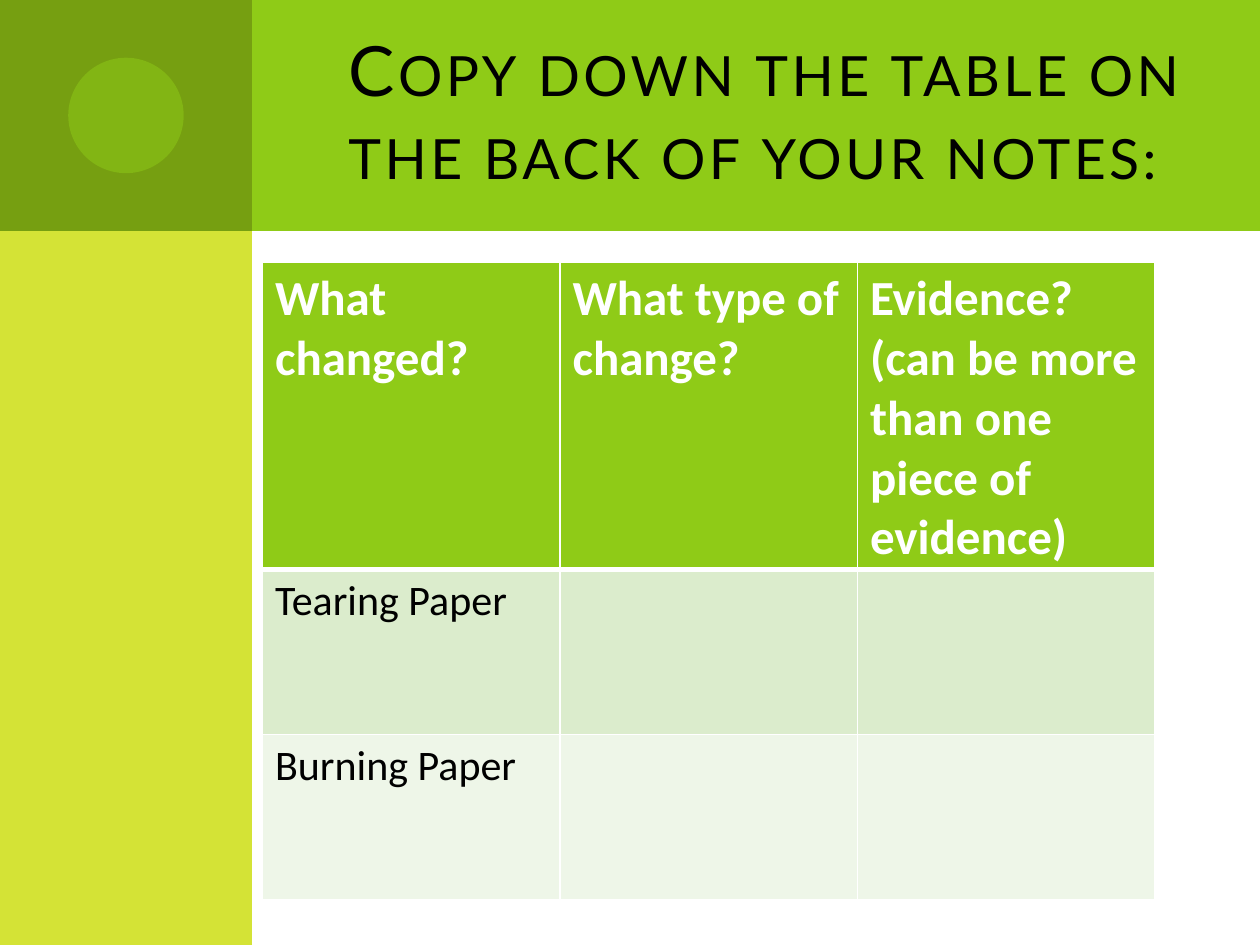
from lxml import etree
from pptx import Presentation
from pptx import util as u
from pptx.dml.color import RGBColor
from pptx.enum import shapes, text
from pptx.oxml import ns

GREEN = RGBColor(0x8F, 0xCB, 0x17)
LIME = RGBColor(0xD4, 0xE3, 0x36)
DARK_GREEN = RGBColor(0x76, 0x9F, 0x11)
PALE_GREEN = RGBColor(0xDB, 0xEC, 0xCC)
PALEST_GREEN = RGBColor(0xEE, 0xF6, 0xE8)
WHITE = RGBColor(0xFF, 0xFF, 0xFF)
BLACK = RGBColor(0, 0, 0)


def add_panel(page, kind, left, top, width, height, color):
    panel = page.shapes.add_shape(kind, u.Pt(left), u.Pt(top), u.Pt(width), u.Pt(height))
    panel.shadow.inherit = False
    panel.fill.solid()
    panel.fill.fore_color.rgb = color
    panel.line.fill.background()
    return panel


def add_border(cell, side, width):
    line = etree.SubElement(cell._tc.get_or_add_tcPr(), ns.qn(f"a:{side}"), w=str(u.Pt(width)))
    fill = etree.SubElement(line, ns.qn("a:solidFill"))
    etree.SubElement(fill, ns.qn("a:srgbClr"), val=str(WHITE))


deck = Presentation()
deck.slide_width, deck.slide_height = u.Pt(720), u.Pt(540)
page = deck.slides.add_slide(deck.slide_layouts[6])

RECTANGLE = shapes.MSO_SHAPE.RECTANGLE
add_panel(page, RECTANGLE, 36, 0, 684, 132, GREEN)
add_panel(page, RECTANGLE, 0, 0, 144, 540, LIME)
add_panel(page, RECTANGLE, 0, 0, 144, 132, DARK_GREEN)
circle = add_panel(page, shapes.MSO_SHAPE.OVAL, 39, 33, 66, 66, GREEN)
circle_color = circle.fill._xPr.find(".//" + ns.qn("a:srgbClr"))
etree.SubElement(circle_color, ns.qn("a:alpha"), val="50000")

title = page.shapes.add_textbox(u.Pt(192), u.Pt(18), u.Pt(492), u.Pt(90))
frame = title.text_frame
frame.word_wrap = True
frame.vertical_anchor = text.MSO_ANCHOR.MIDDLE
frame.text = "Copy down the table on the back of your notes:"
para = frame.paragraphs[0]
para.alignment = text.PP_ALIGN.LEFT
span = para.runs[0]
span.font.name = "Lato"
span.font.size = u.Pt(39.6)
span.font.color.rgb = BLACK
properties = span.font._element
properties.set("cap", "small")
properties.set("spc", "200")

rows = [
    ["What changed?", "What type of change?", "Evidence? (can be more than one piece of evidence)"],
    ["Tearing Paper", "", ""],
    ["Burning Paper", "", ""],
]
row_heights = [174.4, 94.3, 94.3]
row_fills = [GREEN, PALE_GREEN, PALEST_GREEN]
table = page.shapes.add_table(3, 3, u.Pt(150), u.Pt(150), u.Pt(510), u.Pt(363)).table

for column in table.columns:
    column.width = u.Pt(170)

for r, words in enumerate(rows):
    table.rows[r].height = u.Pt(row_heights[r])
    header = r == 0
    for c, word in enumerate(words):
        cell = table.cell(r, c)
        for side in ("lnL", "lnR", "lnT", "lnB"):
            heavy = (header and side == "lnB") or (r == 1 and side == "lnT")
            add_border(cell, side, 3 if heavy else 1)
        cell.fill.solid()
        cell.fill.fore_color.rgb = row_fills[r]
        cell.text_frame.text = word
        for span in cell.text_frame.paragraphs[0].runs:
            span.font.name = "Calibri"
            span.font.size = u.Pt(28 if header else 24)
            span.font.bold = header
            span.font.color.rgb = WHITE if header else BLACK

deck.save("out.pptx")
